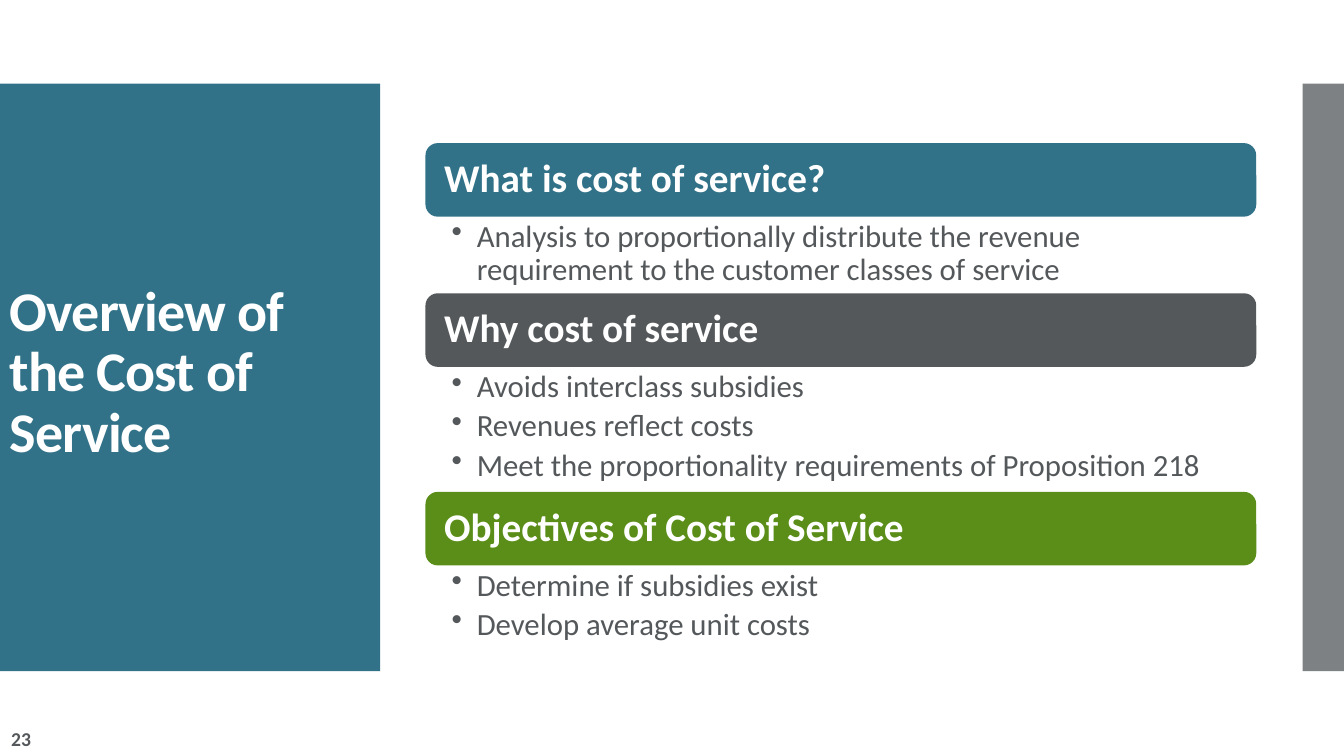
from dataclasses import dataclass

from lxml.etree import SubElement
from pptx import Presentation
from pptx.dml.color import RGBColor
from pptx.enum.shapes import MSO_SHAPE as Preset
from pptx.enum.text import MSO_ANCHOR as Anchor, PP_ALIGN as Align
from pptx.oxml.ns import qn
from pptx.util import Inches, Pt

COLORS = {
    "teal": "327288",
    "gray": "54585A",
    "green": "5A8E18",
    "white": "FFFFFF",
}
FONT = "Calibri"
SECTION_LEFT, SECTION_TOP, SECTION_WIDTH = 4.22, 1.42, 8.24
BAR_HEIGHT = 0.73


@dataclass
class Section:
    heading: str
    color: str
    points: list[str]
    body_height: float


SECTIONS = [
    Section("What is cost of service?", "teal",
            ["Analysis to proportionally distribute the revenue "
             "requirement to the customer classes of service"], 0.76),
    Section("Why cost of service", "gray",
            ["Avoids interclass subsidies", "Revenues reflect costs",
             "Meet the proportionality requirements of Proposition 218"], 1.24),
    Section("Objectives of Cost of Service", "green",
            ["Determine if subsidies exist", "Develop average unit costs"], 0.82),
]


def add_block(page, preset, left: float, top: float, width: float, height: float,
              color: str, opacity: int = 100):
    """Add a filled shape without line or shadow; opacity is in percent."""
    block = page.shapes.add_shape(
        preset, Inches(left), Inches(top), Inches(width), Inches(height))
    block.shadow.inherit = False
    block.fill.solid()
    block.fill.fore_color.rgb = RGBColor.from_string(COLORS[color])
    block.line.fill.background()
    if opacity < 100:
        tint = block.fill._xPr.find(qn("a:solidFill"))[0]
        SubElement(tint, qn("a:alpha"), val=str(opacity * 1000))
    return block


def add_box(page, left: float, top: float, width: float, height: float):
    return page.shapes.add_textbox(
        Inches(left), Inches(top), Inches(width), Inches(height))


def write(box, lines: list[str], *, size: float, color: str, bold: bool = False,
          align=Align.LEFT, anchor=Anchor.TOP, wrap: bool = True,
          insets: tuple[float, float, float, float] = (0.1, 0.05, 0.1, 0.05),
          line_spacing: float = 0.9, space_after: float = 0,
          bullet: bool = False, tracking: int = 0) -> None:
    """Write one paragraph per line; insets run left, top, right, bottom."""
    frame = box.text_frame
    frame.word_wrap = wrap
    frame.vertical_anchor = anchor
    (frame.margin_left, frame.margin_top,
     frame.margin_right, frame.margin_bottom) = map(Inches, insets)
    for index, line in enumerate(lines):
        para = frame.add_paragraph() if index else frame.paragraphs[0]
        para.alignment = align
        para.line_spacing = line_spacing
        para.space_after = Pt(space_after)
        if bullet:
            para.level = 1
            props = para._p.get_or_add_pPr()
            props.set("marL", str(Inches(0.25)))
            props.set("indent", str(Inches(-0.25)))
            SubElement(props, qn("a:buChar"), char="•")
        span = para.add_run()
        span.text = line
        span.font.name = FONT
        span.font.size = Pt(size)
        span.font.bold = bold
        span.font.color.rgb = RGBColor.from_string(COLORS[color])
        if tracking:
            span.font._element.set("spc", str(tracking))


def add_section(page, section: Section, top: float) -> float:
    """Draw a heading bar with its bullets and return the bottom edge."""
    bar = add_block(page, Preset.ROUNDED_RECTANGLE, SECTION_LEFT, top,
                    SECTION_WIDTH, BAR_HEIGHT, section.color)
    write(bar, [section.heading], size=28, color="white", bold=True,
          anchor=Anchor.MIDDLE, insets=(0.15, 0.12, 0.15, 0.12))
    body_top = top + BAR_HEIGHT
    body = add_box(page, SECTION_LEFT, body_top, SECTION_WIDTH, section.body_height)
    write(body, section.points, size=22, color="gray", bullet=True,
          insets=(0.26, 0.04, 0.22, 0.04), space_after=4.4)
    return body_top + section.body_height


def main() -> None:
    deck = Presentation()
    deck.slide_width, deck.slide_height = Inches(13.33), Inches(7.5)
    page = deck.slides.add_slide(deck.slide_layouts[6])

    # Side panels
    add_block(page, Preset.RECTANGLE, 0, 0.83, 3.77, 5.83, "teal")
    add_block(page, Preset.RECTANGLE, 12.92, 0.83, 0.41, 5.83, "gray", opacity=75)

    # Title
    title = add_box(page, 0, 0.83, 3.73, 5.75)
    write(title, ["Overview of the Cost of Service"], size=40, color="white",
          bold=True, anchor=Anchor.MIDDLE, tracking=-60)

    # Sections, stacked from the top
    top = SECTION_TOP
    for section in SECTIONS:
        top = add_section(page, section, top)

    # Page number
    number = add_box(page, 0.01, 7.16, 0.4, 0.34)
    write(number, ["23"], size=14, color="gray", bold=True, align=Align.CENTER,
          wrap=False, line_spacing=1.0)

    deck.save("out.pptx")


if __name__ == "__main__":
    main()
